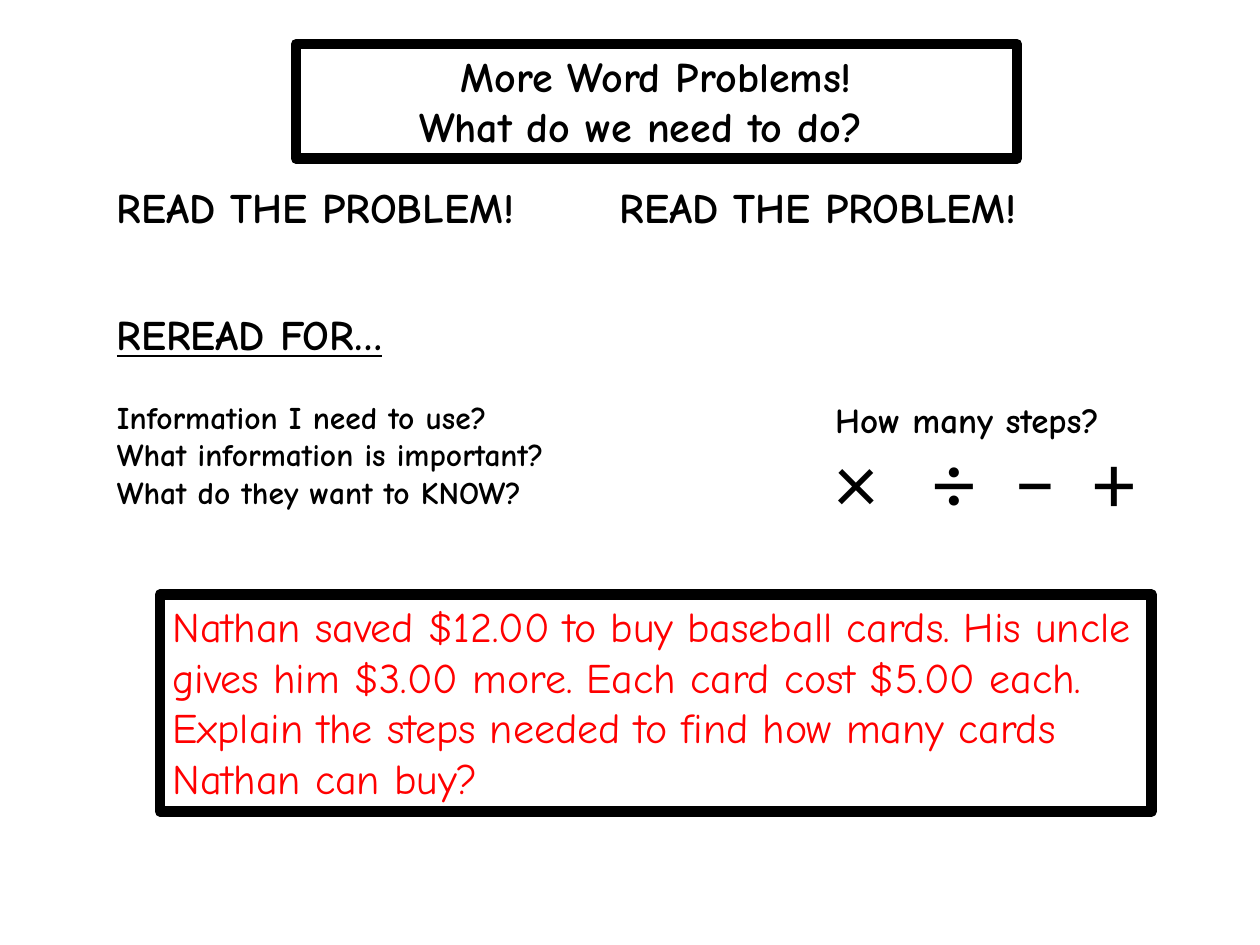
"""Build a slide on the steps for solving a word problem."""
from dataclasses import dataclass

from lxml.etree import SubElement
from pptx import Presentation
from pptx.dml.color import RGBColor
from pptx.enum.shapes import MSO_SHAPE
from pptx.enum.text import MSO_ANCHOR, PP_ALIGN
from pptx.oxml.ns import qn
from pptx.util import Inches, Pt

BLACK = RGBColor(0x00, 0x00, 0x00)
WHITE = RGBColor(0xFF, 0xFF, 0xFF)
RED = RGBColor(0xFF, 0x00, 0x00)
HAND_FONT = "Comic Neue"
SYMBOL_FONT = "Calibri"
SLIDE_WIDTH, SLIDE_HEIGHT = Inches(10), Inches(7.5)
COLUMN, ROW = SLIDE_WIDTH // 100, SLIDE_HEIGHT // 75
BORDER = Pt(6)


@dataclass(frozen=True)
class Line:
    text: str
    size: float = 24
    bold: bool = True
    underline: bool = False
    color: RGBColor = BLACK
    font: str = HAND_FONT
    align: PP_ALIGN = PP_ALIGN.LEFT
    space_before: float = 0
    indent: float = 0
    tabs: tuple[float, ...] = ()


@dataclass(frozen=True)
class Block:
    left: float
    top: float
    width: float
    height: float
    lines: tuple[Line, ...]
    framed: bool = False
    fill: RGBColor | None = None
    right_inset: float = 1


BLOCKS = (
    Block(23.5, 3.5, 57.2, 9.1, (
        Line("More Word Problems!", align=PP_ALIGN.CENTER, indent=2.5),
        Line("What do we need to do?", align=PP_ALIGN.CENTER),
    ), framed=True, fill=WHITE, right_inset=3.5),
    Block(12.7, 47.2, 78.7, 17.2, (
        Line("Nathan saved $12.00 to buy baseball cards. His uncle gives him "
             "$3.00 more. Each card cost $5.00 each. Explain the steps needed "
             "to find how many cards Nathan can buy?", bold=False, color=RED),
    ), framed=True),
    Block(8.3, 13.9, 81.6, 27.3, (
        Line("READ THE PROBLEM!\tREAD THE PROBLEM!", tabs=(39.9,)),
        Line("REREAD FOR…", underline=True, space_before=44),
        Line("Information I need to use?", size=18, space_before=22),
        Line("What information is important?", size=18),
        Line("What do they want to KNOW?", size=18),
    )),
    Block(65.3, 31.1, 34.3, 4.4, (Line("How many steps?", size=20),)),
    Block(65.3, 33.6, 28.3, 9.1, (
        Line("×\t÷\t−\t+", size=48, bold=False, font=SYMBOL_FONT,
             tabs=(7.8, 14.2, 20.5)),
    )),
)


def format_line(para, line: Line) -> None:
    para.text = line.text
    para.alignment = line.align
    para.space_before = Pt(line.space_before)
    properties = para._p.get_or_add_pPr()
    properties.set("marL", str(int(line.indent * COLUMN)))
    if line.tabs:
        tab_list = SubElement(properties, qn("a:tabLst"))
        for position in line.tabs:
            SubElement(tab_list, qn("a:tab"), pos=str(int(position * COLUMN)), algn="l")
    for span in para.runs:
        span.font.name = line.font
        span.font.size = Pt(line.size)
        span.font.bold = line.bold
        span.font.underline = line.underline
        span.font.color.rgb = line.color


def draw_block(page, block: Block) -> None:
    place = (int(block.left * COLUMN), int(block.top * ROW),
             int(block.width * COLUMN), int(block.height * ROW))
    if block.framed:
        box = page.shapes.add_shape(MSO_SHAPE.RECTANGLE, *place)
        box.shadow.inherit = False
        box.line.color.rgb = BLACK
        box.line.width = BORDER
        if block.fill is None:
            box.fill.background()
        else:
            box.fill.solid()
            box.fill.fore_color.rgb = block.fill
    else:
        box = page.shapes.add_textbox(*place)
    frame = box.text_frame
    frame.word_wrap = True
    frame.vertical_anchor = MSO_ANCHOR.TOP
    frame.margin_right = int(block.right_inset * COLUMN)
    for index, line in enumerate(block.lines):
        para = frame.add_paragraph() if index else frame.paragraphs[0]
        format_line(para, line)


def main() -> None:
    deck = Presentation()
    deck.slide_width, deck.slide_height = SLIDE_WIDTH, SLIDE_HEIGHT
    page = deck.slides.add_slide(deck.slide_layouts[6])
    for block in BLOCKS:
        draw_block(page, block)
    deck.save("out.pptx")


if __name__ == "__main__":
    main()
